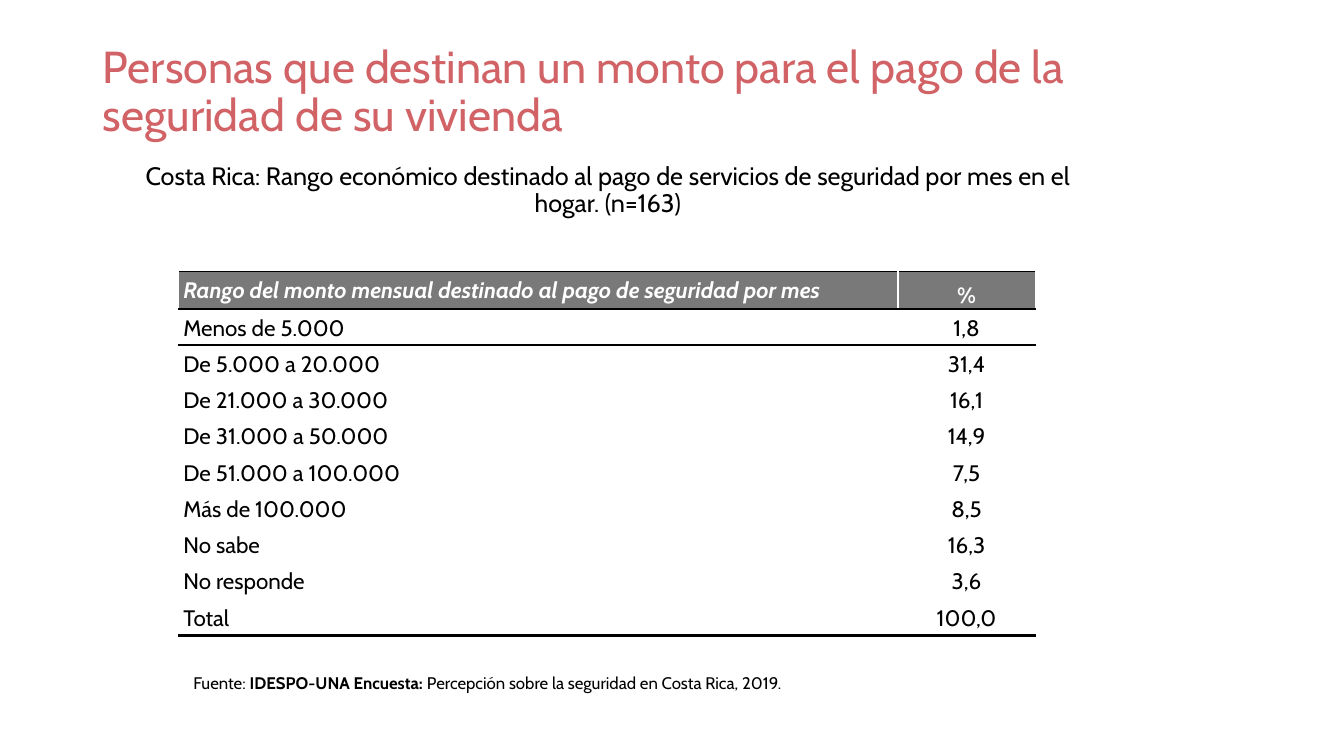
from lxml import etree
from pptx import Presentation, util as u
from pptx.dml.color import RGBColor
from pptx.enum import text as t
from pptx.oxml.ns import qn

HUES = {"title": "D16266", "ink": "000000", "head": "797979", "light": "FFFFFF"}
FACE = "Cabin"
WIDE, HIGH = u.Inches(13.33), u.Inches(7.5)
MID, END = t.MSO_ANCHOR.MIDDLE, t.MSO_ANCHOR.BOTTOM
LEFT, CENTER = t.PP_ALIGN.LEFT, t.PP_ALIGN.CENTER

ROWS = [
    ("Rango del monto mensual destinado al pago de seguridad por mes", "%"),
    ("Menos de 5.000", "1,8"),
    ("De 5.000 a 20.000", "31,4"),
    ("De 21.000 a 30.000", "16,1"),
    ("De 31.000 a 50.000", "14,9"),
    ("De 51.000 a 100.000", "7,5"),
    ("Más de 100.000", "8,5"),
    ("No sabe", "16,3"),
    ("No responde", "3,6"),
    ("Total", "100,0"),
]


# Lengths as percent of the slide
def across(share):
    return int(WIDE * share / 100)


def down(share):
    return int(HIGH * share / 100)


def area(x, y, w, h):
    return across(x), down(y), across(w), down(h)


def style(para, size, hue, align=LEFT, lead=1.0, after=0):
    para.alignment, para.line_spacing = align, lead
    para.space_before, para.space_after = u.Pt(0), u.Pt(after)
    font = para.font
    font.name, font.size = FACE, u.Pt(size)
    font.color.rgb = RGBColor.from_string(HUES[hue])
    return font


def fill_holder(holder, place, words, anchor, size, hue, align):
    holder.left, holder.top, holder.width, holder.height = place
    frame = holder.text_frame
    frame.text = words
    frame.auto_size = t.MSO_AUTO_SIZE.NONE
    frame.vertical_anchor = anchor
    para = frame.paragraphs[0]
    props = para._p.get_or_add_pPr()
    props.set("marL", "0")
    props.set("indent", "0")
    etree.SubElement(props, qn("a:buNone"))
    style(para, size, hue, align, lead=0.9)


def add_rule(cell, side, width):
    line = etree.SubElement(cell._tc.get_or_add_tcPr(), qn("a:" + side),
                            w=str(u.Pt(width)))
    fill = etree.SubElement(line, qn("a:solidFill"))
    etree.SubElement(fill, qn("a:srgbClr"), val=HUES["ink"])


def fill_cell(cell, words, row, col):
    head = row == 0
    # Rules above and below the header, and under the total
    if head:
        add_rule(cell, "lnT", 1)
        add_rule(cell, "lnB", 1.5)
    elif row == 1:
        add_rule(cell, "lnT", 1.5)
    elif row == len(ROWS) - 1:
        add_rule(cell, "lnB", 2.25)
    if head:
        cell.fill.solid()
        cell.fill.fore_color.rgb = RGBColor.from_string(HUES["head"])
    else:
        cell.fill.background()
    cell.margin_left = cell.margin_right = u.Inches(0.05)
    cell.margin_top = cell.margin_bottom = 0
    cell.vertical_anchor = END if head and col else MID
    cell.text = words
    font = style(cell.text_frame.paragraphs[0], 16, "light" if head else "ink",
                 CENTER if col else LEFT, lead=1.07, after=8)
    font.bold = head
    font.italic = head and col == 0


def add_grid(slide):
    place = area(13.27, 35.87, 63.75, 48.2)
    grid = slide.shapes.add_table(len(ROWS), 2, *place).table
    grid.first_row = grid.horz_banding = False
    for col, share in zip(grid.columns, (53.55, 10.2)):
        col.width = across(share)
    for r, pair in enumerate(ROWS):
        grid.rows[r].height = down(4.8 if r else 5)
        for c, words in enumerate(pair):
            fill_cell(grid.cell(r, c), words, r, c)


def add_note(slide, place, parts):
    frame = slide.shapes.add_textbox(*place).text_frame
    frame.word_wrap = True
    para = frame.paragraphs[0]
    style(para, 12, "ink")
    for words, bold in parts:
        run = para.add_run()
        run.text, run.font.bold = words, bold


def main():
    deck = Presentation()
    deck.slide_width, deck.slide_height = WIDE, HIGH
    slide = deck.slides.add_slide(deck.slide_layouts[1])
    # Title and table caption
    fill_holder(slide.shapes.title, area(6.9, 2.67, 81.75, 19.33),
                "Personas que destinan un monto para el pago de la seguridad de su vivienda",
                MID, 32, "title", LEFT)
    fill_holder(slide.placeholders[1], area(7.65, 20.93, 75.15, 67.2),
                "Costa Rica: Rango económico destinado al pago de servicios de seguridad "
                "por mes en el hogar. (n=163)",
                t.MSO_ANCHOR.TOP, 18, "ink", CENTER)
    # Source line
    add_note(slide, area(13.65, 88.27, 48.15, 4),
             [("Fuente: ", False), ("IDESPO-UNA Encuesta: ", True),
              ("Percepción sobre la seguridad en Costa Rica, 2019.", False)])
    # Table of monthly amounts
    add_grid(slide)
    deck.save("out.pptx")


if __name__ == "__main__":
    main()
